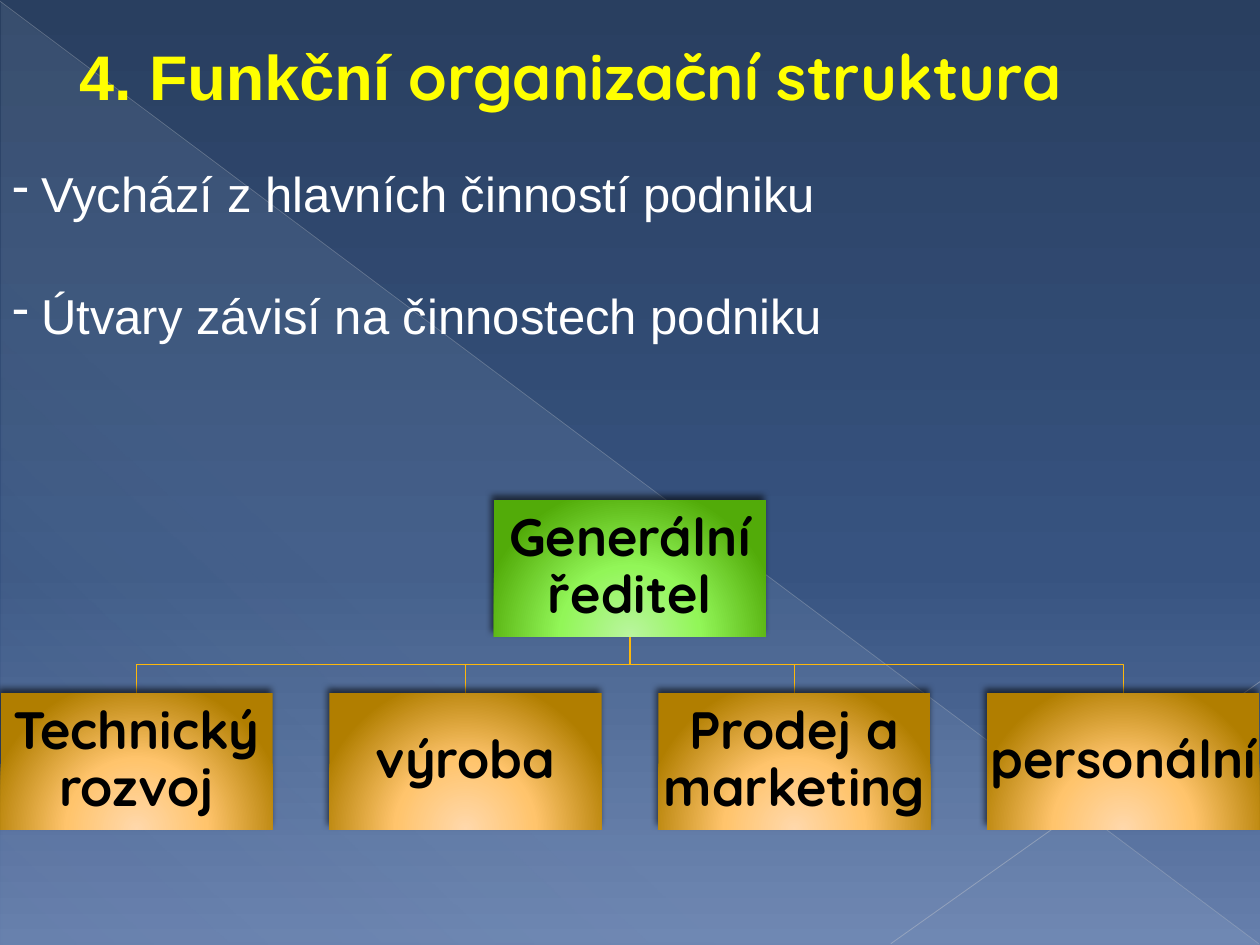
from dataclasses import dataclass

from lxml import etree
from pptx import Presentation
from pptx.dml.color import RGBColor
from pptx.enum.shapes import MSO_CONNECTOR, MSO_SHAPE
from pptx.enum.text import MSO_ANCHOR, PP_ALIGN
from pptx.oxml.ns import qn
from pptx.util import Inches, Pt

RECTANGLE, TRIANGLE = MSO_SHAPE.RECTANGLE, MSO_SHAPE.RIGHT_TRIANGLE
STRAIGHT = MSO_CONNECTOR.STRAIGHT
MIDDLE, CENTER = MSO_ANCHOR.MIDDLE, PP_ALIGN.CENTER


@dataclass(frozen=True)
class Theme:
    title: str = "FFFF00"
    title_outline: str = "589129"
    body: str = "FFFFFF"
    box_text: str = "000000"
    branch: str = "FEB80A"
    shadow: str = "000000"
    # Gradient stops: position %, colour, opacity %
    background: tuple = ((0, "293F60", 100), (60, "375380", 100), (100, "667FAC", 100))
    sheen: tuple = ((0, "D6ECFF", 10), (70, "D6ECFF", 8), (100, "D6ECFF", 1))
    director: tuple = ((0, "BAF59F", 100), (46, "92F658", 100), (100, "52AB09", 100))
    department: tuple = ((0, "FFD8AB", 100), (46, "FFC46C", 100), (100, "B17E00", 100))
    plain_font: str = "Arial"
    round_font: str = "Quicksand"
    title_size: int = 36
    body_size: int = 28
    box_size: int = 30


THEME = Theme()
SLIDE_W, SLIDE_H = 10, 7.5
BOX_W, BOX_H = 2.16, 1.08
BOX_PITCH = 2.61
DIRECTOR_TOP, DEPARTMENT_TOP = 3.97, 5.5
DIRECTOR = "Generální ředitel"
DEPARTMENTS = ["Technický rozvoj", "výroba", "Prodej a marketing", "personální"]
POINTS = ["Vychází z hlavních činností podniku", "Útvary závisí na činnostech podniku"]


def apply_format(target, values):
    for name, value in values.items():
        setattr(target, name, value)


def add_xml(parent, tag, **attributes):
    values = {name: str(value) for name, value in attributes.items()}
    return etree.SubElement(parent, qn(tag), values)


def add_color(parent, color, opacity=100):
    node = add_xml(parent, "a:srgbClr", val=color)
    if opacity < 100:
        add_xml(node, "a:alpha", val=opacity * 1000)


def set_gradient(fill, holder, stops, angle=None):
    """Fill linearly at an angle, or from a circle below the shape without one."""
    fill.solid()
    solid = holder.find(qn("a:solidFill"))
    gradient = etree.Element(qn("a:gradFill"), rotWithShape="1")
    stop_list = add_xml(gradient, "a:gsLst")
    for position, color, opacity in stops:
        add_color(add_xml(stop_list, "a:gs", pos=position * 1000), color, opacity)
    if angle is None:
        circle = add_xml(gradient, "a:path", path="circle")
        add_xml(circle, "a:fillToRect", l=50000, t=155000, r=50000, b=-55000)
    else:
        add_xml(gradient, "a:lin", ang=angle * 60000, scaled=0)
    holder.replace(solid, gradient)


def add_run(paragraph, text, font, size, color, bold=False):
    run = paragraph.add_run()
    run.text = text
    apply_format(run.font, {"name": font, "size": Pt(size), "bold": bold})
    run.font.color.rgb = RGBColor.from_string(color)
    return run


def add_background(slide):
    fill = slide.background.fill
    fill.solid()
    set_gradient(fill, slide.element.cSld.bg.bgPr, THEME.background, 90)
    sheen = slide.shapes.add_shape(
        TRIANGLE, Inches(0.01), Inches(0.02), Inches(9.99), Inches(7.48))
    sheen.shadow.inherit = False
    set_gradient(sheen.fill, sheen.element.spPr, THEME.sheen, 133)
    sheen.line.fill.background()


def add_hairline(slide, start, end, color, width, opacity):
    line = slide.shapes.add_connector(STRAIGHT, *map(Inches, start + end))
    line.line.width = Pt(width)
    line.line.color.rgb = RGBColor.from_string(color)
    spPr = line.element.spPr
    add_xml(spPr.find(".//" + qn("a:srgbClr")), "a:alpha", val=opacity * 1000)
    add_xml(spPr, "a:effectLst")


def add_title(slide):
    title = slide.shapes.add_textbox(0, 0, Inches(SLIDE_W), Inches(1.19))
    frame = title.text_frame
    apply_format(frame, {"word_wrap": True, "vertical_anchor": MIDDLE})
    paragraph = frame.paragraphs[0]
    paragraph._p.get_or_add_pPr().set("marL", str(Inches(0.53)))
    parts = [("4. Funkční", THEME.plain_font),
             (" organizační struktura", THEME.round_font)]
    for text, font in parts:
        run = add_run(paragraph, text, font, THEME.title_size, THEME.title, True)
        outline = etree.Element(qn("a:ln"), w=str(Pt(0.5)))
        add_color(add_xml(outline, "a:solidFill"), THEME.title_outline)
        run.font._element.insert(0, outline)


def add_points(slide):
    box = slide.shapes.add_textbox(0, Inches(1.25), Inches(SLIDE_W), Inches(1.51))
    frame = box.text_frame
    frame.word_wrap = True
    for index, text in enumerate(POINTS):
        paragraph = frame.add_paragraph() if index else frame.paragraphs[0]
        paragraph.space_before = Pt(36 if index else 0)
        properties = paragraph._p.get_or_add_pPr()
        properties.set("marL", str(Inches(0.23)))
        properties.set("indent", str(-Inches(0.23)))
        add_xml(properties, "a:buChar", char="-")
        add_run(paragraph, text, THEME.plain_font, THEME.body_size, THEME.body)


def add_branch(slide, department_x):
    center = SLIDE_W / 2
    top = DIRECTOR_TOP + BOX_H
    bend = (top + DEPARTMENT_TOP) / 2
    builder = slide.shapes.build_freeform(Inches(center), Inches(top))
    corners = [(center, bend), (department_x, bend), (department_x, DEPARTMENT_TOP)]
    builder.add_line_segments(
        [(Inches(x), Inches(y)) for x, y in corners], close=False)
    branch = builder.convert_to_shape()
    branch.shadow.inherit = False
    branch.fill.background()
    branch.line.width = Pt(0.75)
    branch.line.color.rgb = RGBColor.from_string(THEME.branch)


def add_box(slide, text, center, top, stops):
    box = slide.shapes.add_shape(
        RECTANGLE, Inches(center - BOX_W / 2), Inches(top), Inches(BOX_W), Inches(BOX_H))
    box.shadow.inherit = False
    spPr = box.element.spPr
    set_gradient(box.fill, spPr, stops)
    box.line.fill.background()
    shadow = add_xml(
        spPr.find(qn("a:effectLst")), "a:outerShdw", blurRad=Pt(4), dist=Pt(3),
        dir=245 * 60000, algn="ctr", rotWithShape=0)
    add_color(shadow, THEME.shadow, 60)
    frame = box.text_frame
    margins = ("margin_left", "margin_top", "margin_right", "margin_bottom")
    apply_format(frame, dict.fromkeys(margins, Inches(0.02)))
    apply_format(frame, {"word_wrap": True, "vertical_anchor": MIDDLE})
    paragraph = frame.paragraphs[0]
    apply_format(paragraph, {"alignment": CENTER, "line_spacing": 0.9})
    add_run(paragraph, text, THEME.round_font, THEME.box_size, THEME.box_text, True)


def add_organization(slide):
    center = SLIDE_W / 2
    middle = (len(DEPARTMENTS) - 1) / 2
    centers = [center + (i - middle) * BOX_PITCH for i in range(len(DEPARTMENTS))]
    for department_x in reversed(centers):
        add_branch(slide, department_x)
    add_box(slide, DIRECTOR, center, DIRECTOR_TOP, THEME.director)
    for text, department_x in zip(DEPARTMENTS, centers):
        add_box(slide, text, department_x, DEPARTMENT_TOP, THEME.department)


def main():
    deck = Presentation()
    apply_format(deck, {"slide_width": Inches(SLIDE_W), "slide_height": Inches(SLIDE_H)})
    slide = deck.slides.add_slide(deck.slide_layouts[6])
    add_background(slide)
    add_hairline(slide, (0, 0.01), (9.99, 7.49), "B7BCC5", 0.39, 35)
    add_hairline(slide, (10, 5.41), (7.07, 7.49), "BFC3CB", 0.47, 45)
    add_title(slide)
    add_points(slide)
    add_organization(slide)
    deck.save("out.pptx")


if __name__ == "__main__":
    main()
